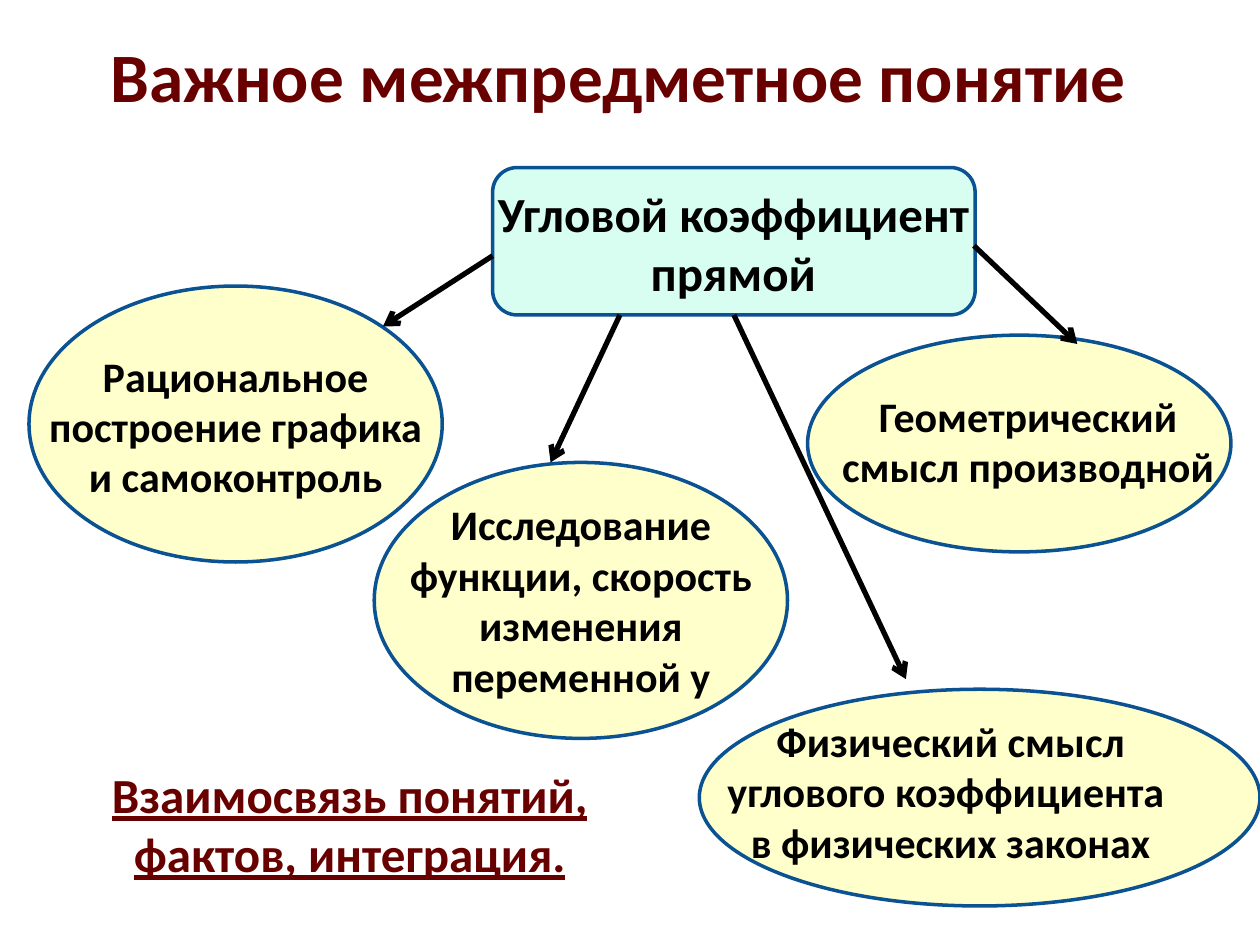
import pptx
import pptx.dml.color
import pptx.enum.shapes
import pptx.enum.text
import pptx.oxml
import pptx.oxml.ns
import pptx.util

Inches = pptx.util.Inches
Pt = pptx.util.Pt
RGBColor = pptx.dml.color.RGBColor
Shape = pptx.enum.shapes.MSO_SHAPE

MAROON = RGBColor(0x68, 0x00, 0x00)
BLACK = RGBColor(0x00, 0x00, 0x00)
BLUE = RGBColor(0x0B, 0x52, 0x92)
MINT = RGBColor(0xA5, 0xFD, 0xE0)
CREAM = RGBColor(0xFF, 0xFF, 0xCC)


def drawing_element(tag, attributes=""):
    namespace = pptx.oxml.ns.nsdecls("a")
    return pptx.oxml.parse_xml(f"<a:{tag} {namespace} {attributes}/>")


class ConceptMap:
    """Holds the style and the current page."""

    font_name = "Calibri"

    def __init__(self, page):
        self.page = page

    def fill_text(self, frame, paragraphs, size, color, underline=None):
        frame.word_wrap = True
        for index, text in enumerate(paragraphs):
            para = frame.paragraphs[0] if index == 0 else frame.add_paragraph()
            para.alignment = pptx.enum.text.PP_ALIGN.CENTER
            span = para.add_run()
            span.text = text
            span.font.name = self.font_name
            span.font.size = Pt(size)
            span.font.bold = True
            span.font.underline = underline
            span.font.color.rgb = color

    def title(self, text, area):
        box = self.page.shapes.title
        box.left, box.top, box.width, box.height = map(Inches, area)
        box.text_frame.vertical_anchor = pptx.enum.text.MSO_ANCHOR.MIDDLE
        self.fill_text(box.text_frame, [text], 39.6, MAROON)

    def shape(self, kind, area, fill, opacity=None):
        shape = self.page.shapes.add_shape(kind, *map(Inches, area))
        shape.shadow.inherit = False
        shape.fill.solid()
        shape.fill.fore_color.rgb = fill
        shape.line.color.rgb = BLUE
        shape.line.width = Pt(2)
        if opacity is not None:
            color = shape._element.spPr.find(
                "./" + pptx.oxml.ns.qn("a:solidFill")
                + "/" + pptx.oxml.ns.qn("a:srgbClr"))
            color.append(drawing_element("alpha", f'val="{opacity * 1000}"'))
        return shape

    def text(self, paragraphs, area, size=24, color=BLACK, underline=None):
        box = self.page.shapes.add_textbox(*map(Inches, area))
        self.fill_text(box.text_frame, paragraphs, size, color, underline)

    def arrow(self, start, end):
        line = self.page.shapes.add_connector(
            pptx.enum.shapes.MSO_CONNECTOR.STRAIGHT, *map(Inches, start + end))
        line.line.color.rgb = BLACK
        line.line.width = Pt(3)
        properties = line._element.spPr
        properties.find(pptx.oxml.ns.qn("a:ln")).append(
            drawing_element("tailEnd", 'type="arrow"'))
        properties.append(drawing_element("effectLst"))
        return line


def main():
    deck = pptx.Presentation()
    deck.slide_width, deck.slide_height = Inches(10), Inches(7.5)
    concept_map = ConceptMap(deck.slides.add_slide(deck.slide_layouts[5]))

    concept_map.title("Важное межпредметное понятие ", (0.47, 0.23, 9, 0.72))

    # Central concept
    center = concept_map.shape(
        Shape.ROUNDED_RECTANGLE, (3.91, 1.33, 3.83, 1.17), MINT, opacity=44)
    concept_map.text(
        ["Угловой коэффициент прямой"], (3.83, 1.41, 3.98, 1.04), size=28)

    # Related ideas: ellipse area, text area, paragraphs
    ideas = [
        ((0.23, 2.27, 3.28, 2.19), (0.23, 2.73, 3.28, 1.31),
         ["Рациональное построение графика и самоконтроль"]),
        ((5.55, 5.47, 4.45, 1.72), (5.63, 5.63, 3.83, 1.31),
         ["Физический смысл углового коэффициента ",
          "в физических законах"]),
        ((6.41, 2.66, 3.36, 1.72), (6.56, 3.05, 3.2, 0.91),
         ["Геометрический смысл производной"]),
        ((2.97, 3.67, 3.28, 2.19), (2.97, 3.91, 3.28, 1.72),
         ["Исследование функции, скорость изменения переменной у"]),
    ]
    for ellipse_area, text_area, paragraphs in ideas:
        concept_map.shape(Shape.OVAL, ellipse_area, CREAM)
        concept_map.text(paragraphs, text_area)

    # Arrows from the concept to the ideas
    concept_map.arrow((3.91, 2.03), (3.04, 2.59))
    concept_map.arrow((7.73, 1.95), (8.55, 2.73))
    concept_map.arrow((4.92, 2.5), (4.37, 3.67))
    physics_arrow = concept_map.arrow((5.82, 2.5), (7.19, 5.39))
    physics_arrow.begin_connect(center, 2)

    # Conclusion
    concept_map.text(["Взаимосвязь понятий, фактов, интеграция."],
                     (0.39, 6.02, 4.77, 1.04), 28, MAROON, underline=True)

    deck.save("out.pptx")


if __name__ == "__main__":
    main()
